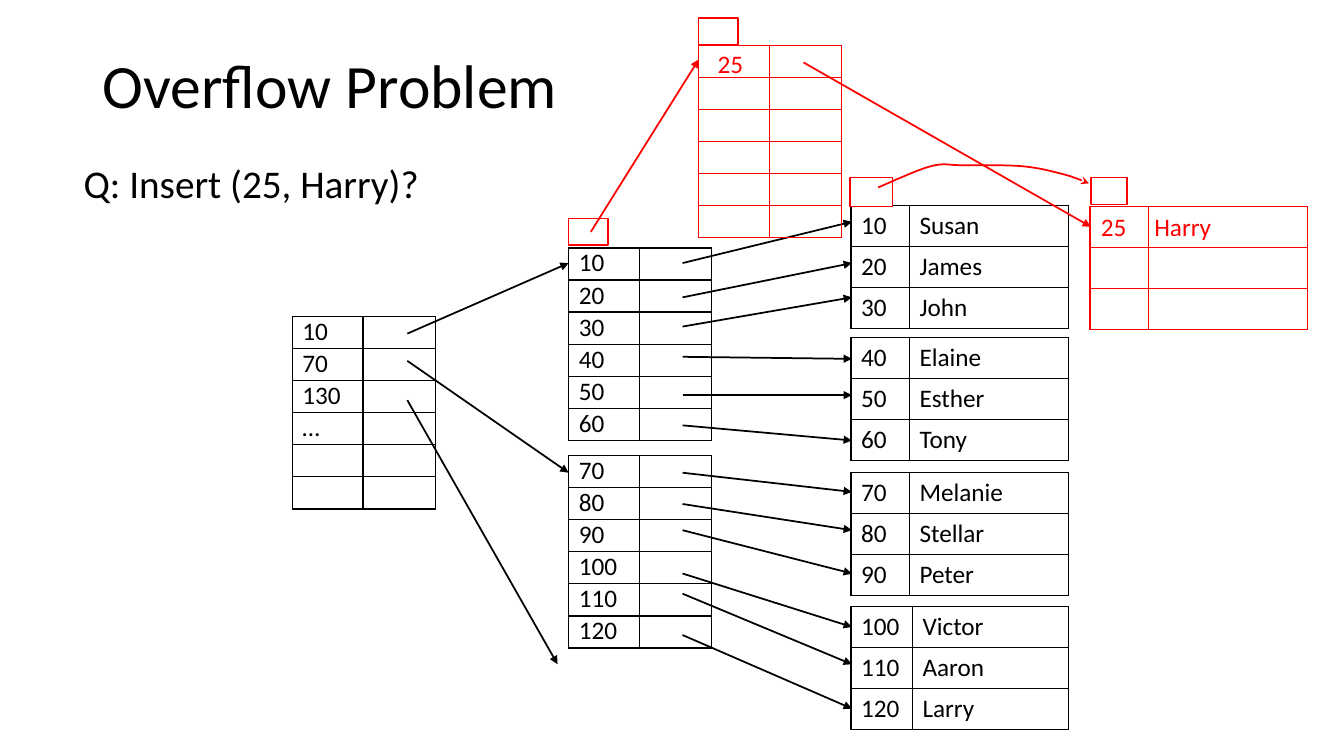
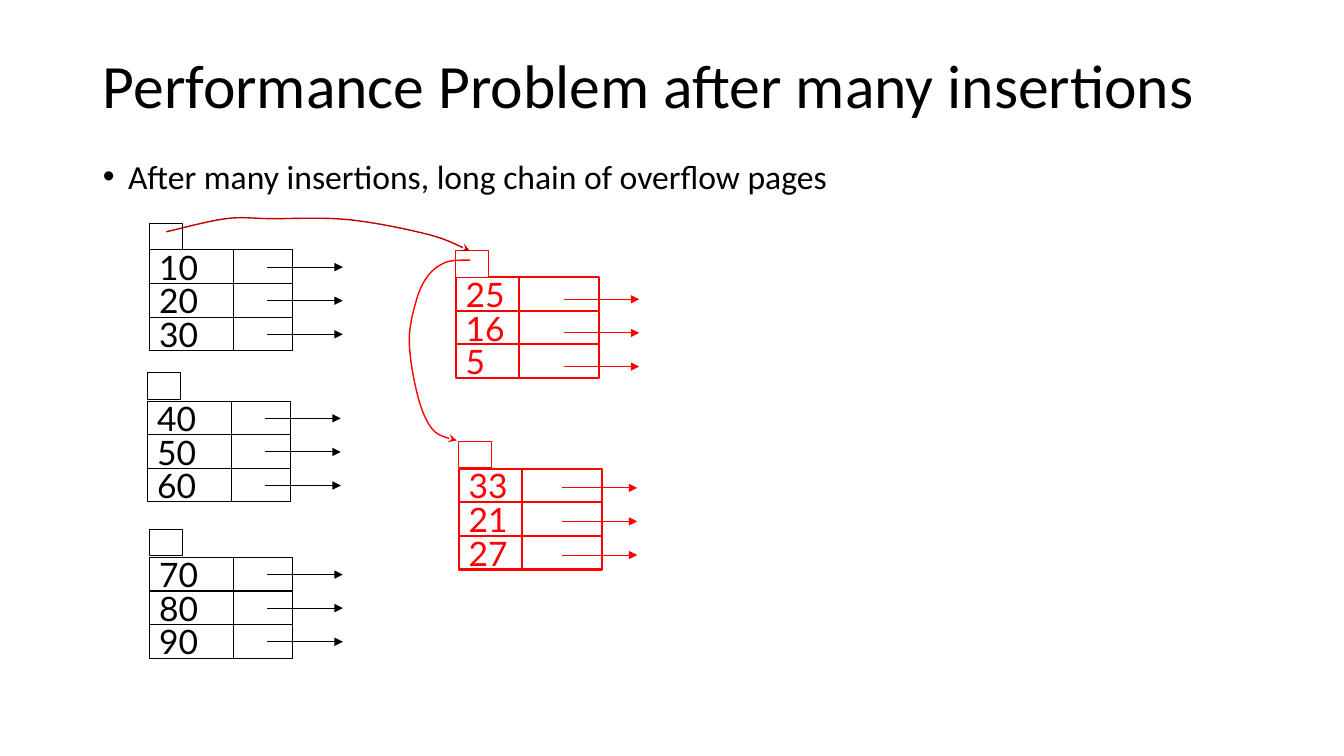
"""Build two slides on index overflow pages."""
from lxml.etree import SubElement
from pptx import Presentation
from pptx.dml.color import RGBColor
from pptx.enum.shapes import MSO_CONNECTOR, MSO_SHAPE
from pptx.enum.text import MSO_ANCHOR, MSO_AUTO_SIZE, PP_ALIGN
from pptx.oxml.ns import qn
from pptx.util import Inches, Pt

BLACK = RGBColor(0, 0, 0)
WHITE = RGBColor(255, 255, 255)
RED = RGBColor(255, 0, 0)
DARK = RGBColor(192, 0, 0)
FONT = "Calibri"
WIDE, TALL = 13.33, 7.5

LEAVES = [
    (2.04, 0.58, [("10", "Susan"), ("20", "James"), ("30", "John")]),
    (3.35, 0.58, [("40", "Elaine"), ("50", "Esther"), ("60", "Tony")]),
    (4.69, 0.58, [("70", "Melanie"), ("80", "Stellar"), ("90", "Peter")]),
    (6.02, 0.61, [("100", "Victor"), ("110", "Aaron"), ("120", "Larry")]),
]
NODES = [["10", "20", "30", "40", "50", "60"],
         ["70", "80", "90", "100", "110", "120"]]
ROOT = ["10", "70", "130", "…", "", ""]
SPILL = [("", "")] * 3
EXTRA = [""] * 6
NOTES = [("25", 10.82, 2.05), ("Harry", 11.35, 2.05), ("25", 7.02, 0.43)]

LINKS = [(2.61, 2.2), (2.95, 2.61), (3.24, 2.95), (3.54, 3.56),
         (3.92, 3.92), (4.22, 4.37), (4.69, 4.88), (5, 5.26),
         (5.26, 5.69), (5.69, 6.22), (5.89, 6.59), (6.3, 7.03)]
DROPS = [(3.31, 5.64, 2.61), (3.58, 5.64, 4.69), (3.97, 5.53, 6.59)]
JUMPS = [(5.86, 2.3, 6.93, 0.59), (7.97, 0.62, 10.82, 2.25)]
TAGS = [(8.43, 1.76, 0.42, 0.29), (10.82, 1.76, 0.36, 0.27),
        (5.64, 2.17, 0.39, 0.26), (6.93, 0.18, 0.39, 0.26)]
HOP = [(8.71, 1.86), (9.23, 1.65), (9.55, 1.64), (10.14, 1.65),
       (10.55, 1.73), (10.8, 1.82)]

PAGES = [
    (1.48, 2.48, ["10", "20", "30"], 0.26),
    (1.46, 3.98, ["40", "50", "60"], 0.28),
    (1.48, 5.53, ["70", "80", "90"], 0.28),
]
CHAIN = [
    (4.52, 2.75, ["25", "16", "5"], 0.26, 1.07, 0.22),
    (4.55, 4.65, ["33", "21", "27"], 0.27, 1.02, 0.19),
]
FIRST = [(1.65, 2.3), (2.24, 2.17), (2.69, 2.17), (3.46, 2.18),
         (4.26, 2.33), (4.66, 2.49)]
NEXT = [(4.66, 2.58), (4.43, 2.6), (4.25, 2.73), (4.13, 2.98), (4.06, 3.4),
        (4.15, 3.95), (4.3, 4.27), (4.53, 4.37)]


def put(item, **vals):
    for key, val in vals.items():
        setattr(item, key, val)


def write(frame, text, size, tint=BLACK, face=FONT):
    para = frame.paragraphs[0]
    run = para.add_run()
    run.text = text
    put(run.font, size=Pt(size), name=face)
    run.font.color.rgb = tint
    return para


def place(item, left, top, wide, tall):
    put(item, left=Inches(left), top=Inches(top),
        width=Inches(wide), height=Inches(tall))


def page(deck, title, text, left, top, size, mark):
    slide = deck.slides.add_slide(deck.slide_layouts[1])
    head, body = slide.placeholders
    place(head, 0.92, 0.33, 11.5, 1.09)
    place(body, left, top, 11.5, 5.22)
    for item, words, pts, anchor in ((head, title, 44, MSO_ANCHOR.MIDDLE),
                                     (body, text, size, MSO_ANCHOR.TOP)):
        put(item.text_frame, vertical_anchor=anchor, word_wrap=True,
            auto_size=MSO_AUTO_SIZE.NONE)
        para = write(item.text_frame, words, pts)
        put(para, alignment=PP_ALIGN.LEFT, line_spacing=0.9,
            space_before=Pt(0))
    props = para._p.get_or_add_pPr()
    props.set("marL", str(Inches(0.25)))
    props.set("indent", str(-Inches(0.25)))
    if mark:
        SubElement(props, qn("a:buChar")).set("char", mark)
    else:
        SubElement(props, qn("a:buNone"))
    return slide


def stroke(item, tint, wide, tip=None):
    item.line.color.rgb = tint
    item.line.width = Pt(wide)
    if tip:
        SubElement(item.line._get_or_add_ln(), qn("a:tailEnd")).set("type", tip)


def line(slide, ends, tint, wide, tip="triangle"):
    link = slide.shapes.add_connector(MSO_CONNECTOR.STRAIGHT,
                                      *map(Inches, ends))
    stroke(link, tint, wide, tip)
    SubElement(link._element.spPr, qn("a:effectLst"))


def box(slide, area, tint, wide, text=""):
    rect = slide.shapes.add_shape(MSO_SHAPE.RECTANGLE, *map(Inches, area))
    rect.shadow.inherit = False
    rect.fill.solid()
    rect.fill.fore_color.rgb = WHITE
    stroke(rect, tint, wide)
    if text:
        put(rect.text_frame, vertical_anchor=MSO_ANCHOR.MIDDLE, word_wrap=True)
        write(rect.text_frame, text, 24, tint, "Lato").alignment = PP_ALIGN.LEFT


def blend(a, b, c, d, t):
    return (2 * b + (c - a) * t + (2 * a - 5 * b + 4 * c - d) * t ** 2
            + (3 * b - a - 3 * c + d) * t ** 3) / 2


def curve(slide, knots, tint, wide, steps=8):
    pts = [knots[0], *knots, knots[-1]]
    spots = [tuple(Inches(blend(*axis, n / steps))
                   for axis in zip(*pts[i:i + 4]))
             for i in range(len(knots) - 1) for n in range(1, steps + 1)]
    pen = slide.shapes.build_freeform(*map(Inches, knots[0]), scale=1.0)
    pen.add_line_segments(spots, close=False)
    arc = pen.convert_to_shape()
    arc.shadow.inherit = False
    arc.fill.background()
    stroke(arc, tint, wide, "stealth")


def edge(cell, tint):
    props = cell._tc.get_or_add_tcPr()
    for i, side in enumerate(("a:lnL", "a:lnR", "a:lnT", "a:lnB")):
        rim = SubElement(props, qn(side))
        rim.set("w", str(Pt(1)))
        fill = SubElement(rim, qn("a:solidFill"))
        SubElement(fill, qn("a:srgbClr")).set("val", str(tint))
        props.insert(i, rim)


def grid(slide, left, top, rows, cols, tall, pad, tint=BLACK):
    area = (left, top, sum(cols), tall * len(rows))
    table = slide.shapes.add_table(len(rows), len(cols),
                                   *map(Inches, area)).table
    put(table, first_row=False, horz_banding=False)
    for col, wide in zip(table.columns, cols):
        col.width = Inches(wide)
    for row, words in zip(table.rows, rows):
        row.height = Inches(tall)
        for cell, text in zip(row.cells, words):
            put(cell, margin_top=Inches(pad), margin_bottom=Inches(pad))
            cell.fill.background()
            edge(cell, tint)
            if text:
                write(cell.text_frame, text, 18, tint)


def node(slide, left, top, keys, tint=BLACK):
    grid(slide, left, top, [(key, "") for key in keys],
         (0.7, 0.72), 1.91 / 6, 0, tint)


def leaf(slide, left, top, rows, first=0.58, tint=BLACK):
    grid(slide, left, top, rows, (first, 2.16 - first), 0.4, 0.05, tint)


def note(slide, text, left, top):
    label = slide.shapes.add_textbox(*map(Inches, (left, top, 0.8, 0.4)))
    label.text_frame.word_wrap = True
    write(label.text_frame, text, 18, RED)


def overflow(deck):
    slide = page(deck, "Overflow Problem", "Q: Insert (25, Harry)?",
                 0.73, 1.58, 28, "")
    for top, first, rows in LEAVES:
        leaf(slide, 8.44, top, rows, first)
    for i, keys in enumerate(NODES):
        node(slide, 5.64, 2.46 + 2.06 * i, keys)
    node(slide, 2.9, 3.14, ROOT)
    for start, end in LINKS:
        line(slide, (6.77, start, 8.45, end), BLACK, 1.25)
    for start, right, end in DROPS:
        line(slide, (4.04, start, right, end), BLACK, 1.25)
    leaf(slide, 10.81, 2.05, SPILL, tint=RED)
    node(slide, 6.93, 0.45, EXTRA, RED)
    for area in TAGS:
        box(slide, area, RED, 1)
    curve(slide, HOP, RED, 1.25)
    for ends in JUMPS:
        line(slide, ends, RED, 1.25)
    for part in NOTES:
        note(slide, *part)


def stack(slide, left, top, keys, lift, start=1.17, drop=0.17,
          tint=BLACK, wide=0.75, split=0.84):
    step = 1 / 3
    for i, key in enumerate(keys):
        box(slide, (left, top + step * i, 1.42, step), tint, wide, key)
    mid = left + split
    line(slide, (mid, top, mid, top + step * len(keys)), tint, wide, None)
    box(slide, (left, top - lift, 0.33, 0.26), tint, 0.75)
    for i in range(len(keys)):
        high = top + drop + step * i
        line(slide, (left + start, high, left + start + 0.75, high), tint, 0.75)


def chain(deck):
    slide = page(deck, "Performance Problem after many insertions",
                 "After many insertions, long chain of overflow pages",
                 0.92, 1.54, 24, "•")
    for part in PAGES:
        stack(slide, *part)
    for part in CHAIN:
        stack(slide, *part, tint=RED, wide=1.5, split=0.63)
    curve(slide, FIRST, DARK, 1)
    curve(slide, NEXT, RED, 1)


def main():
    deck = Presentation()
    put(deck, slide_width=Inches(WIDE), slide_height=Inches(TALL))
    overflow(deck)
    chain(deck)
    deck.save("out.pptx")


if __name__ == "__main__":
    main()
